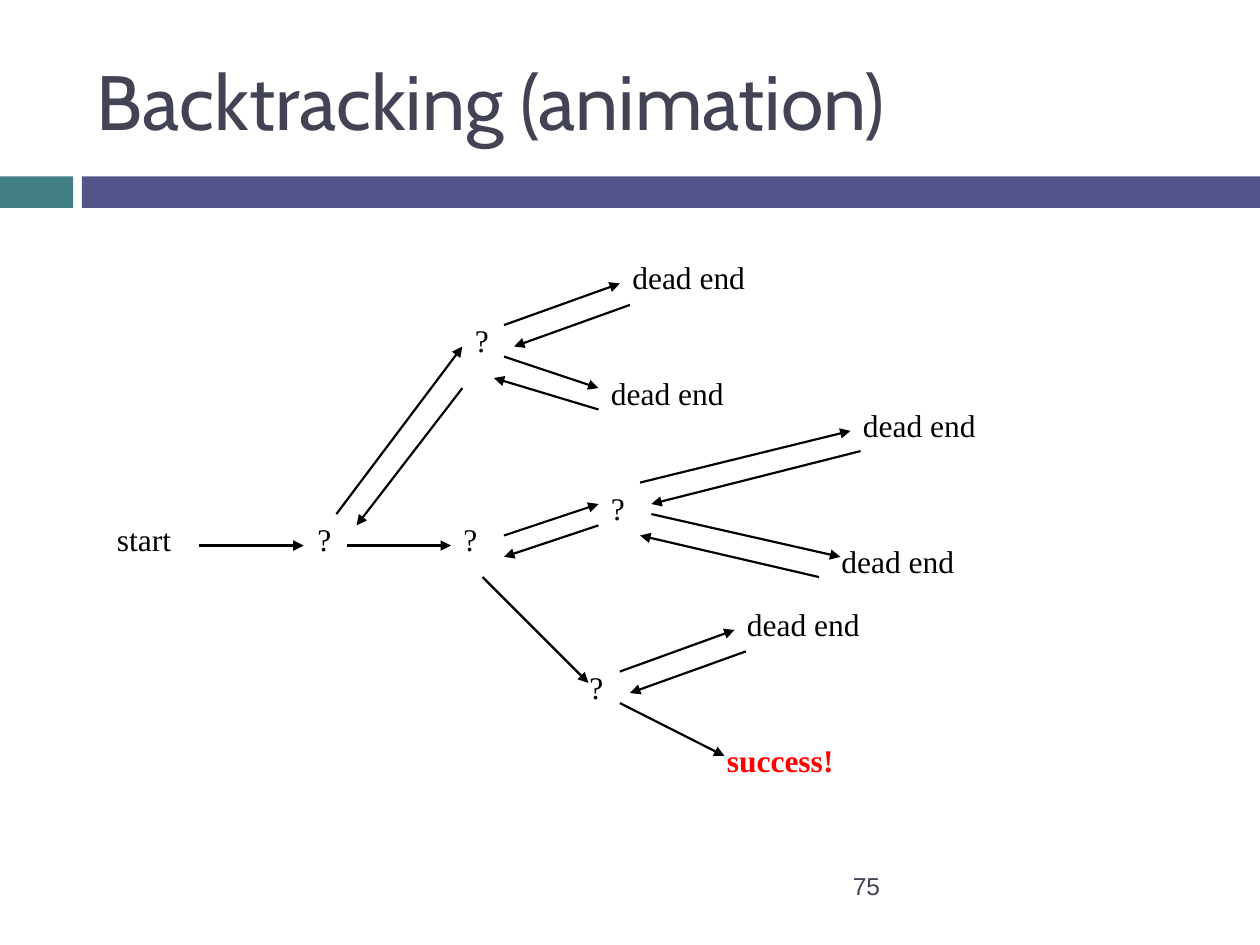
from lxml import etree
from pptx import Presentation
from pptx.dml.color import RGBColor
from pptx.enum.shapes import MSO_CONNECTOR, MSO_SHAPE
from pptx.enum.text import MSO_ANCHOR
from pptx.oxml.ns import qn
from pptx.util import Inches, Pt

STRAIGHT = MSO_CONNECTOR.STRAIGHT
RECTANGLE = MSO_SHAPE.RECTANGLE
TOP = MSO_ANCHOR.TOP
MIDDLE = MSO_ANCHOR.MIDDLE

COLORS = {
    "teal": "438086",
    "purple": "53548A",
    "heading": "424456",
    "ink": "000000",
    "success": "FF0000",
}

BANDS = [(0, 0.58, "teal"), (0.65, 9.35, "purple")]

CHOICES = [
    (2.42, 4.08, 0.5),
    (3.67, 2.5, 0.42),
    (3.58, 4.08, 0.5),
    (4.75, 3.83, 0.5),
    (4.58, 5.25, 0.5),
]

DEAD_ENDS = [(4.92, 2), (4.75, 2.92), (6.75, 3.17), (6.58, 4.25), (5.83, 4.75)]

FORWARD_ARROWS = [
    (1.58, 4.33, 2.41, 4.33),
    (2.67, 4.08, 3.67, 2.75),
    (2.75, 4.33, 3.58, 4.33),
    (4, 2.58, 4.92, 2.25),
    (4, 2.83, 4.75, 3.08),
    (4, 4.25, 4.75, 4),
    (5.08, 3.83, 6.75, 3.42),
    (5.17, 4.08, 6.67, 4.42),
    (3.83, 4.58, 4.67, 5.42),
    (4.92, 5.33, 5.83, 5),
    (4.92, 5.58, 5.75, 6),
]

BACKTRACK_ARROWS = [
    (5, 2.42, 4.08, 2.75),
    (4.75, 3.25, 3.92, 3),
    (3.67, 3.08, 2.83, 4.17),
    (6.83, 3.58, 5.17, 4),
    (6.5, 4.58, 5.08, 4.25),
    (4.75, 4.17, 4, 4.42),
    (5.92, 5.17, 5, 5.5),
]


def color(name):
    return RGBColor.from_string(COLORS[name])


def add_band(slide, left, width, fill):
    shape = slide.shapes.add_shape(
        RECTANGLE, Inches(left), Inches(1.4), Inches(width), Inches(0.25)
    )
    shape.shadow.inherit = False
    shape.fill.solid()
    shape.fill.fore_color.rgb = color(fill)
    shape.line.fill.background()


def add_text(slide, text, left, top, width, height, size, font, ink, anchor, bold=False):
    shape = slide.shapes.add_textbox(
        Inches(left), Inches(top), Inches(width), Inches(height)
    )
    frame = shape.text_frame
    frame.word_wrap = True
    frame.vertical_anchor = anchor
    run = frame.paragraphs[0].add_run()
    run.text = text
    run.font.size = Pt(size)
    run.font.name = font
    run.font.bold = bold
    run.font.color.rgb = color(ink)


def add_label(slide, text, left, top, width, ink="ink", bold=False):
    add_text(slide, text, left, top, width, 0.5, 18, "Times New Roman", ink, TOP, bold)


def add_arrow(slide, start_x, start_y, end_x, end_y):
    connector = slide.shapes.add_connector(
        STRAIGHT, Inches(start_x), Inches(start_y), Inches(end_x), Inches(end_y)
    )
    connector.line.width = Pt(1.25)
    connector.line.color.rgb = color("ink")
    line = connector.line._get_or_add_ln()
    etree.SubElement(line, qn("a:tailEnd"), type="triangle")
    etree.SubElement(connector._element.spPr, qn("a:effectLst"))


def main():
    presentation = Presentation()
    presentation.slide_width = Inches(10)
    presentation.slide_height = Inches(7.5)
    slide = presentation.slides.add_slide(presentation.slide_layouts[6])

    for left, width, fill in BANDS:
        add_band(slide, left, width, fill)
    add_text(slide, "75", 6.67, 6.83, 2.92, 0.4, 14, "Arial", "heading", MIDDLE)
    add_text(
        slide, "Backtracking (animation)", 0.67, 0.25, 8.92, 1.08,
        44, "Cabin", "heading", MIDDLE,
    )

    add_label(slide, "start", 0.83, 4.08, 0.83)
    for left, top, width in CHOICES:
        add_label(slide, "?", left, top, width)
    for left, top in DEAD_ENDS:
        add_label(slide, "dead end", left, top, 1.75)
    add_label(slide, "success!", 5.67, 5.83, 1.75, "success", True)

    for ends in FORWARD_ARROWS + BACKTRACK_ARROWS:
        add_arrow(slide, *ends)

    presentation.save("out.pptx")


if __name__ == "__main__":
    main()
